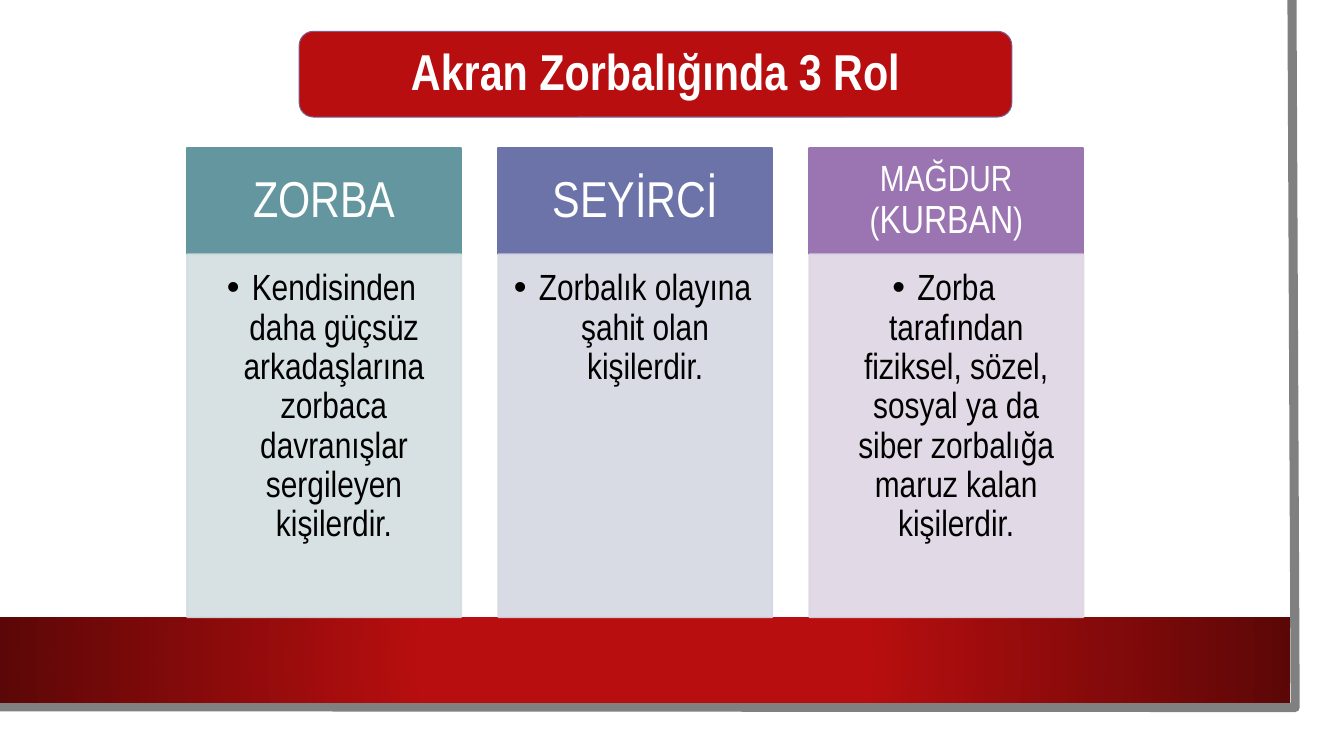
import dataclasses

import lxml.etree
import pptx
import pptx.dml.color
import pptx.enum.shapes
import pptx.enum.text
import pptx.oxml
import pptx.oxml.ns
import pptx.util

Cm = pptx.util.Cm
Pt = pptx.util.Pt
Anchor = pptx.enum.text.MSO_ANCHOR
Preset = pptx.enum.shapes.MSO_SHAPE
qn = pptx.oxml.ns.qn

TITLE = "Akran Zorbalığında 3 Rol"
ROLES = [
    {"heading": [("ZORBA", 36)], "inset": (0.71, 0.41),
     "strong": "64969F", "pale": "D3DDDF",
     "text": "Kendisinden daha güçsüz arkadaşlarına zorbaca davranışlar sergileyen kişilerdir."},
    {"heading": [("SEYİRCİ", 36)], "inset": (0.71, 0.41),
     "strong": "6C73A9", "pale": "D4D6E2",
     "text": "Zorbalık olayına şahit olan kişilerdir."},
    {"heading": [("MAĞDUR (", 26), ("KURBAN", 28), (")", 26)], "inset": (0.51, 0.3),
     "strong": "9B75B2", "pale": "DED6E4",
     "text": "Zorba tarafından fiziksel, sözel, sosyal ya da siber zorbalığa maruz kalan kişilerdir."},
]


@dataclasses.dataclass(frozen=True)
class Theme:
    font: str = "Arial Narrow"
    title_size: int = 36
    body_size: int = 26
    red: str = "B80E0F"
    dark_red: str = "5C0707"
    plate_line: str = "7C5E8F"
    frame: str = "808080"
    white: str = "FFFFFF"
    black: str = "000000"


THEME = Theme()
COLUMN_LEFT, COLUMN_WIDTH, COLUMN_PITCH = 4.72, 6.9, 7.84
HEADING_TOP, BODY_TOP, BODY_BOTTOM = 3.73, 6.41, 15.55
PLATE = (7.54, 0.79, 17.96, 2.16)
BAND = (0, 15.55, 32.51, 2.16)
FRAME_POINTS = [(32.56, 0), (32.64, 17.83), (-0.08, 17.81)]


def rgb(code):
    return pptx.dml.color.RGBColor.from_string(code)


def place(shape, left, top, width, height):
    shape.left, shape.top = Cm(left), Cm(top)
    shape.width, shape.height = Cm(width), Cm(height)


def paint(shape, fill, line, weight):
    shape.fill.solid()
    shape.fill.fore_color.rgb = rgb(fill)
    shape.line.color.rgb = rgb(line)
    shape.line.width = Pt(weight)


def add_block(page, preset, area):
    shape = page.shapes.add_shape(preset, *map(Cm, area))
    shape.shadow.inherit = False
    return shape


def write(shape, runs, color, anchor, insets, bold=False):
    frame = shape.text_frame
    frame.word_wrap = True
    frame.auto_size = pptx.enum.text.MSO_AUTO_SIZE.NONE
    frame.vertical_anchor = anchor
    frame.margin_left, frame.margin_top, frame.margin_right, frame.margin_bottom = map(Cm, insets)
    para = frame.paragraphs[0]
    para.alignment = pptx.enum.text.PP_ALIGN.CENTER
    para.line_spacing = 0.9
    para.space_before = Pt(0)
    for text, size in runs:
        span = para.add_run()
        span.text = text
        span.font.name = THEME.font
        span.font.size = Pt(size)
        span.font.bold = bold
        span.font.color.rgb = rgb(color)
    return para


def add_bullet(para):
    properties = para._p.get_or_add_pPr()
    properties.set("marL", str(Cm(0.63)))
    properties.set("indent", str(-Cm(0.63)))
    lxml.etree.SubElement(properties, qn("a:buFont")).set("typeface", "Arial")
    lxml.etree.SubElement(properties, qn("a:buChar")).set("char", "•")


def make_translucent(shape, percent):
    for color in shape.element.spPr.iter(qn("a:srgbClr")):
        lxml.etree.SubElement(color, qn("a:alpha")).set("val", str(percent * 1000))


def add_frame(page):
    points = [(Cm(x), Cm(y)) for x, y in FRAME_POINTS]
    builder = page.shapes.build_freeform(*points[0])
    builder.add_line_segments(points[1:], close=False)
    frame = builder.convert_to_shape()
    frame.shadow.inherit = False
    frame.fill.background()
    frame.line.color.rgb = rgb(THEME.frame)
    frame.line.width = Pt(6.5)


def add_band(page):
    band = add_block(page, Preset.RECTANGLE, BAND)
    band.line.fill.background()
    gradient = pptx.oxml.parse_xml(
        f'<a:gradFill {pptx.oxml.ns.nsdecls("a")} rotWithShape="1"><a:gsLst>'
        f'<a:gs pos="34000"><a:srgbClr val="{THEME.red}"/></a:gs>'
        f'<a:gs pos="100000"><a:srgbClr val="{THEME.dark_red}"/></a:gs></a:gsLst>'
        '<a:path path="circle"><a:fillToRect l="50000" t="50000" r="50000" b="50000"/></a:path>'
        '</a:gradFill>')
    band.element.spPr.find(qn("a:prstGeom")).addnext(gradient)


def add_title(page):
    plate = add_block(page, Preset.ROUNDED_RECTANGLE, PLATE)
    paint(plate, THEME.red, THEME.plate_line, 0.75)
    title = page.shapes.title
    place(title, *PLATE)
    write(title, [(TITLE, THEME.title_size)], THEME.white, Anchor.MIDDLE, [0.38] * 4, bold=True)
    plate.element.addnext(title.element)


def add_role(page, role, body, left):
    heading = add_block(page, Preset.RECTANGLE,
                        (left, HEADING_TOP, COLUMN_WIDTH, BODY_TOP - HEADING_TOP))
    paint(heading, role["strong"], role["strong"], 1.5)
    write(heading, role["heading"], THEME.white, Anchor.MIDDLE, role["inset"] * 2)

    place(body, left, BODY_TOP, COLUMN_WIDTH, BODY_BOTTOM - BODY_TOP)
    paint(body, role["pale"], role["pale"], 1.5)
    make_translucent(body, 90)
    para = write(body, [(role["text"], THEME.body_size)], THEME.black, Anchor.TOP,
                 (0.38, 0.38, 0.51, 0.58))
    add_bullet(para)
    heading.element.addnext(body.element)


def main():
    deck = pptx.Presentation()
    deck.slide_width, deck.slide_height = Cm(33.87), Cm(19.05)
    page = deck.slides.add_slide(deck.slide_layouts.get_by_name("Comparison"))
    bodies = [holder for holder in page.placeholders if holder.placeholder_format.idx > 0]
    for spare in bodies[len(ROLES):]:
        spare.element.getparent().remove(spare.element)
    add_frame(page)
    add_band(page)
    for index, (role, body) in enumerate(zip(ROLES, bodies)):
        add_role(page, role, body, COLUMN_LEFT + index * COLUMN_PITCH)
    add_title(page)
    deck.save("out.pptx")


if __name__ == "__main__":
    main()
